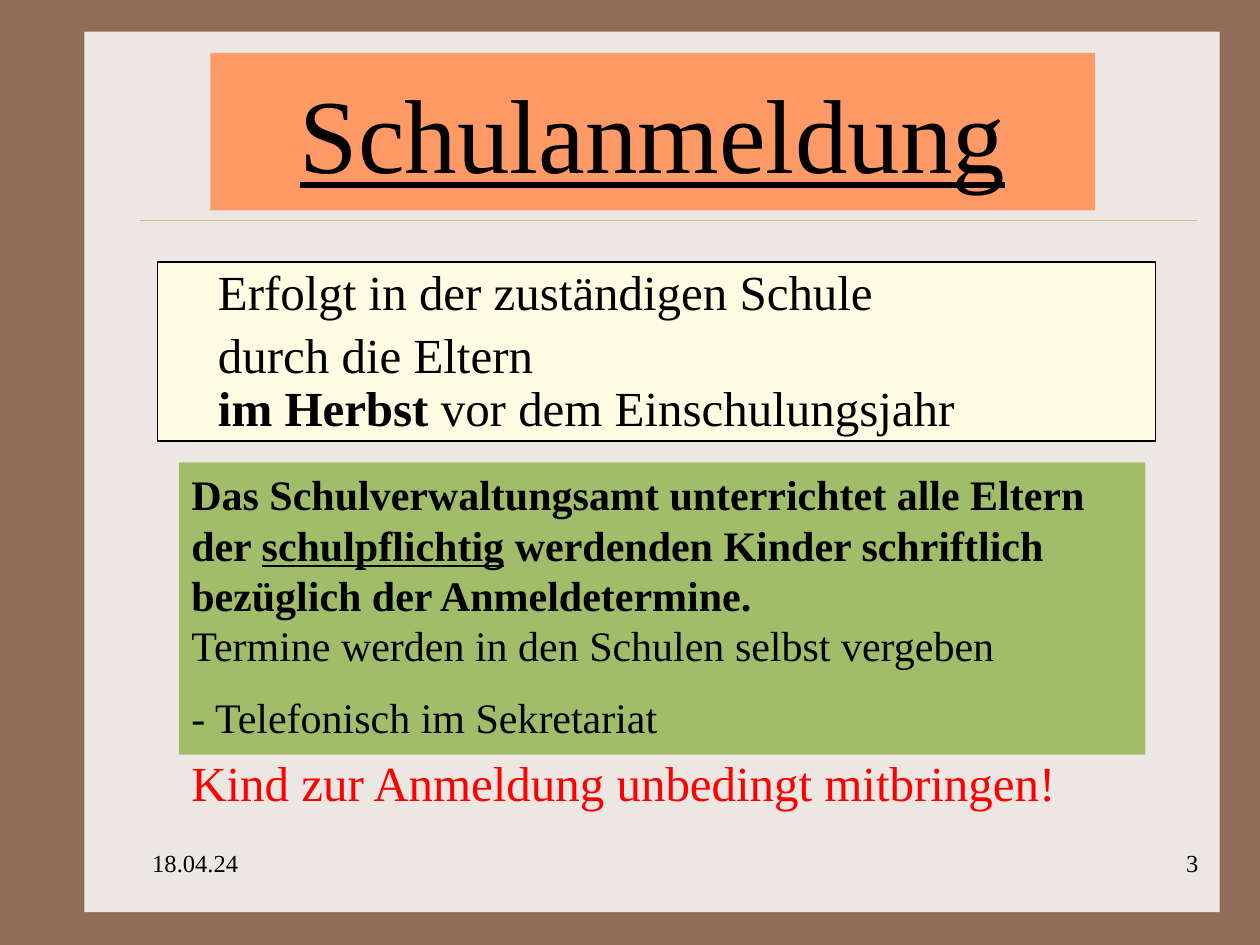
from lxml import etree
from pptx import Presentation
from pptx import util as u
from pptx.dml.color import RGBColor
from pptx.enum import shapes, text
from pptx.oxml.ns import qn

BROWN = RGBColor(0x90, 0x6D, 0x58)
PAPER = RGBColor(0xED, 0xE7, 0xE3)
GOLD = RGBColor(0xCB, 0xBD, 0x83)
ORANGE = RGBColor(0xFF, 0x99, 0x66)
CREAM = RGBColor(0xFE, 0xFD, 0xE3)
GREEN = RGBColor(0xA1, 0xBD, 0x69)
RED = RGBColor(0xFF, 0x00, 0x00)
BLACK = RGBColor(0x00, 0x00, 0x00)
FONT = "Times New Roman"
LEFT, RIGHT = text.PP_ALIGN.LEFT, text.PP_ALIGN.RIGHT


def inch(*vals):
    return [u.Inches(v) for v in vals]


def place(shape, box):
    shape.left, shape.top, shape.width, shape.height = inch(*box)


def paint(shape, color):
    shape.fill.solid()
    shape.fill.fore_color.rgb = color


def setup(frame, anchor=text.MSO_ANCHOR.TOP):
    frame.word_wrap = True
    frame.auto_size = text.MSO_AUTO_SIZE.NONE
    frame.vertical_anchor = anchor
    frame.margin_left = frame.margin_right = u.Inches(0.1)
    frame.margin_top = frame.margin_bottom = u.Inches(0.05)


def write(para, runs, size, color=BLACK, align=LEFT, before=0):
    """Add (words, bold, underline) runs; None is a line break."""
    para.alignment = align
    para.space_before = u.Pt(before)
    for item in runs:
        if item is None:
            para.add_line_break()
            continue
        run = para.add_run()
        run.text, run.font.bold, run.font.underline = item
        run.font.name = FONT
        run.font.size = u.Pt(size)
        run.font.color.rgb = color


def plain(words):
    return [(words, False, False)]


def page(slide, box):
    # Paper sheet on a brown ground, with the rule under the title
    slide.background.fill.solid()
    slide.background.fill.fore_color.rgb = BROWN
    sheet = slide.shapes.add_shape(shapes.MSO_SHAPE.RECTANGLE, *inch(*box))
    sheet.shadow.inherit = False
    paint(sheet, PAPER)
    sheet.line.fill.background()
    x, y = box[0] + 0.44, box[1] + 1.5
    rule = slide.shapes.add_connector(
        shapes.MSO_CONNECTOR.STRAIGHT, *inch(x, y, x + 8.39, y))
    rule.line.color.rgb = GOLD
    rule.line.width = u.Pt(0.25)
    etree.SubElement(rule._element.spPr, qn("a:effectLst"))
    # Placeholders go in front of the sheet
    for hold in list(slide.placeholders):
        slide.shapes._spTree.append(hold._element)


def title(slide, box):
    head = slide.shapes.title
    place(head, box)
    paint(head, ORANGE)
    setup(head.text_frame, text.MSO_ANCHOR.MIDDLE)
    write(head.text_frame.paragraphs[0], [("Schulanmeldung", False, True)],
          60, align=text.PP_ALIGN.CENTER)


def body(slide, box):
    hold = slide.placeholders[1]
    place(hold, box)
    paint(hold, CREAM)
    hold.line.color.rgb = BLACK
    hold.line.width = u.Pt(0.75)
    frame = hold.text_frame
    setup(frame)
    lines = [
        plain("Erfolgt in der zuständigen Schule"),
        plain("durch die Eltern") + [None, ("im Herbst", True, False)]
        + plain(" vor dem Einschulungsjahr"),
    ]
    for i, runs in enumerate(lines):
        para = frame.add_paragraph() if i else frame.paragraphs[0]
        props = para._p.get_or_add_pPr()
        props.set("marL", str(u.Inches(0.38)))
        props.set("indent", "0")
        etree.SubElement(props, qn("a:buNone"))
        para.line_spacing = 0.9
        write(para, runs, 28, before=5.6 if i else 0)


def note(slide, box, paras, size, color=BLACK, fill=None, align=LEFT):
    label = slide.shapes.add_textbox(*inch(*box))
    if fill is not None:
        paint(label, fill)
    frame = label.text_frame
    setup(frame)
    for i, runs in enumerate(paras):
        para = frame.add_paragraph() if i else frame.paragraphs[0]
        write(para, runs, size, color, align, size / 2 if i else 0)


def footer(slide, box):
    # Date at the left end, page number at the right end
    x, y, w, h = box
    cell = 2.08
    note(slide, (x, y, cell, h), [plain("18.04.24")], 14)
    note(slide, (x + w - cell, y, cell, h), [plain("3")], 14, align=RIGHT)


def main():
    deck = Presentation()
    deck.slide_width, deck.slide_height = inch(10, 7.5)
    slide = deck.slides.add_slide(deck.slide_layouts[1])
    page(slide, (0.67, 0.25, 9.01, 6.99))
    title(slide, (1.67, 0.42, 7.02, 1.25))
    body(slide, (1.25, 2.08, 7.92, 1.42))
    # Green panel with the dates
    note(slide, (1.42, 3.67, 7.67, 2.32), [
        [("Das Schulverwaltungsamt unterrichtet alle Eltern der ", True, False),
         ("schulpflichtig", True, True),
         (" werdenden Kinder schriftlich bezüglich der Anmeldetermine. ",
          True, False),
         None] + plain("Termine werden in den Schulen selbst vergeben"),
        plain("- Telefonisch im Sekretariat"),
    ], 24, fill=GREEN)
    # Red reminder
    note(slide, (1.42, 5.92, 7.83, 0.57),
         [plain("Kind zur Anmeldung unbedingt mitbringen!")], 28, RED)
    footer(slide, (1.11, 6.68, 8.5, 0.5))
    deck.save("out.pptx")


if __name__ == "__main__":
    main()
